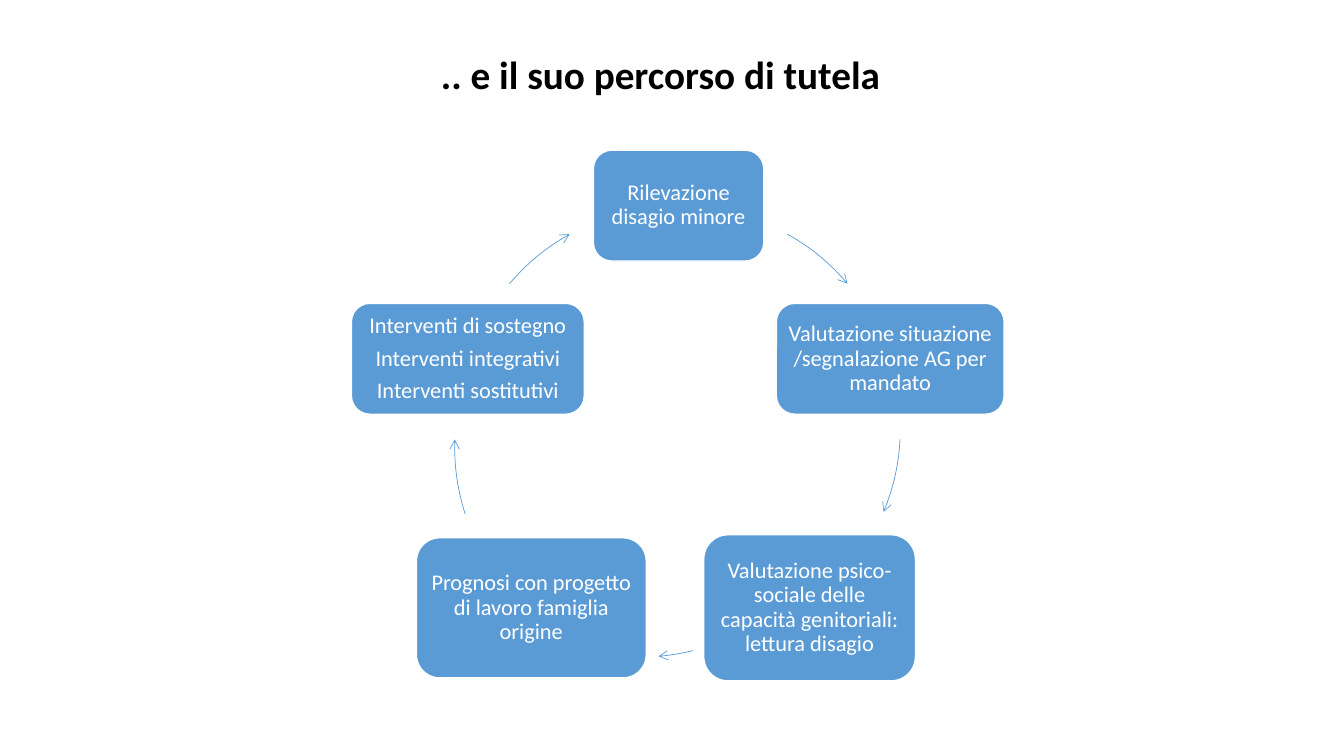
import pptx
import pptx.util
import pptx.dml.color
import pptx.enum.shapes
import pptx.enum.text
from lxml import etree

TITLE = ".. e il suo percorso di tutela"
BLUE, WHITE, BLACK = "5B9BD5", "FFFFFF", "000000"
SLIDE_WIDTH, SLIDE_HEIGHT = 13.33, 7.5
RADIUS = 2.2
CENTER = (6.73, 4.24)

# fields: lines, box centre, box size, arc centre, arc angles
STEPS = [
    (["Rilevazione disagio minore"],
     (6.73, 2.04), (1.69, 1.1), CENTER, (299.4, 319.6)),
    (["Valutazione situazione /segnalazione AG per mandato"],
     (8.83, 3.56), (2.26, 1.1), CENTER, (3.1, 22.4)),
    (["Valutazione psico-sociale delle capacità genitoriali: lettura disagio"],
     (8.03, 6.03), (2.1, 1.45), (6.34, 4.32), (76, 85)),
    (["Prognosi con progetto di lavoro famiglia origine"],
     (5.27, 6.03), (2.28, 1.39), (6.71, 4.43), (162.2, 181.8)),
    (["Interventi di sostegno", "Interventi integrativi", "Interventi sostitutivi"],
     (4.64, 3.56), (2.31, 1.1), CENTER, (220.4, 240.6)),
]


def color(value):
    return pptx.dml.color.RGBColor.from_string(value)


def centered(center, size):
    left, top = (middle - length / 2 for middle, length in zip(center, size))
    return [pptx.util.Inches(length) for length in (left, top, *size)]


def write(shape, lines, size, ink, bold=False, margin=0.1):
    frame = shape.text_frame
    frame.word_wrap = True
    frame.vertical_anchor = pptx.enum.text.MSO_ANCHOR.MIDDLE
    frame.margin_left = frame.margin_right = pptx.util.Inches(margin)
    frame.margin_top = frame.margin_bottom = pptx.util.Inches(margin)
    for index, line in enumerate(lines):
        paragraph = frame.add_paragraph() if index else frame.paragraphs[0]
        paragraph.text = line
        paragraph.alignment = pptx.enum.text.PP_ALIGN.CENTER
        paragraph.line_spacing = 0.9
        if index:
            paragraph.space_before = pptx.util.Pt(size * 0.35)
        font = paragraph.runs[0].font
        font.name, font.size, font.bold = "Calibri", pptx.util.Pt(size), bold
        font.color.rgb = color(ink)


def add_step_box(slide, lines, center, size):
    box = slide.shapes.add_shape(
        pptx.enum.shapes.MSO_SHAPE.ROUNDED_RECTANGLE, *centered(center, size))
    box.shadow.inherit = False
    box.fill.solid()
    box.fill.fore_color.rgb = color(BLUE)
    box.line.color.rgb = color(WHITE)
    box.line.width = pptx.util.Pt(1)
    write(box, lines, 16, WHITE, margin=0.06)


def add_arc_arrow(slide, center, angles):
    arc = slide.shapes.add_shape(
        pptx.enum.shapes.MSO_SHAPE.ARC, *centered(center, (2 * RADIUS, 2 * RADIUS)))
    arc.shadow.inherit = False
    for index, angle in enumerate(angles):
        arc.adjustments[index] = angle * 0.6
    arc.fill.background()
    arc.line.color.rgb = color(BLUE)
    arc.line.width = pptx.util.Pt(0.5)
    outline = arc.line._get_or_add_ln()
    etree.SubElement(outline, pptx.oxml.ns.qn("a:tailEnd"), type="arrow")


def main():
    presentation = pptx.Presentation()
    presentation.slide_width = pptx.util.Inches(SLIDE_WIDTH)
    presentation.slide_height = pptx.util.Inches(SLIDE_HEIGHT)
    slide = presentation.slides.add_slide(presentation.slide_layouts[6])
    title = slide.shapes.add_textbox(*centered((6.55, 0.76), (11.74, 0.72)))
    write(title, [TITLE], 28, BLACK, bold=True)
    for lines, center, size, arc_center, angles in STEPS:
        add_step_box(slide, lines, center, size)
        add_arc_arrow(slide, arc_center, angles)
    presentation.save("out.pptx")


if __name__ == "__main__":
    main()
